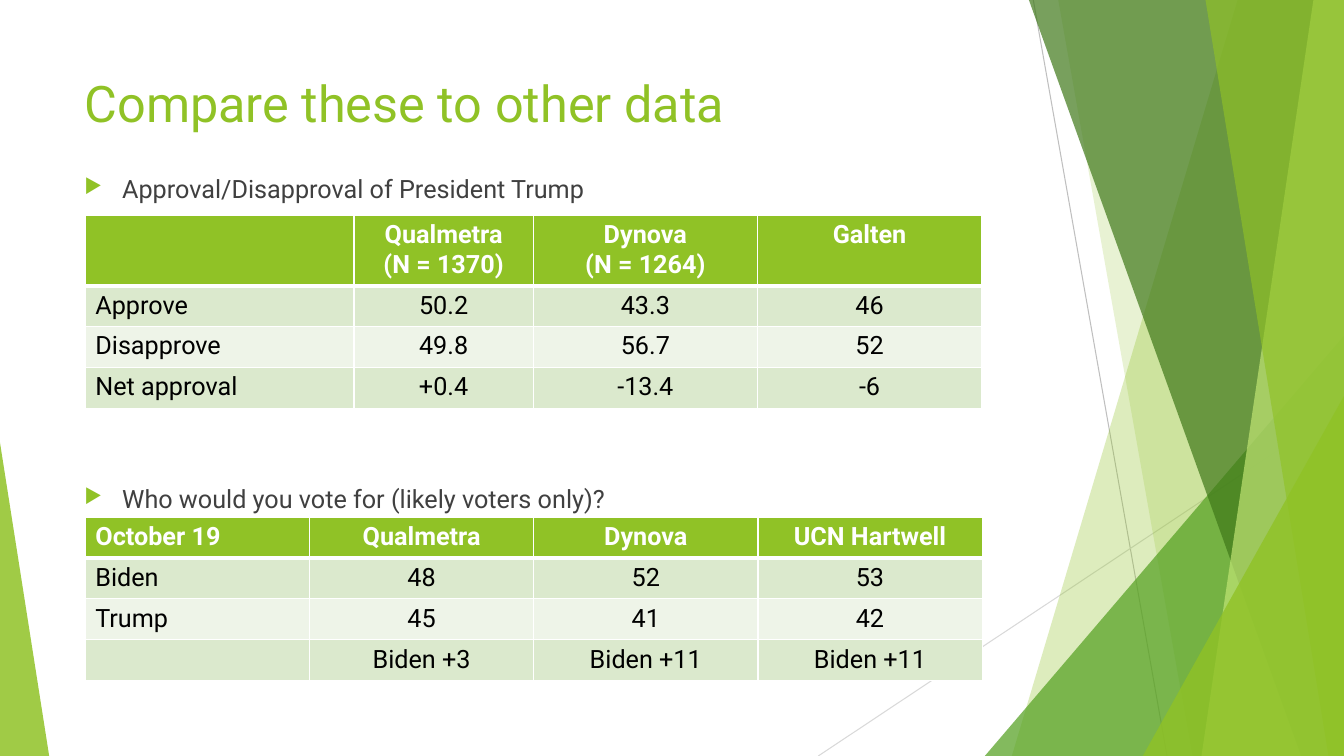
from dataclasses import dataclass
from itertools import accumulate

from lxml import etree
from pptx import Presentation
from pptx import util as u
from pptx.dml.color import RGBColor
from pptx.enum import shapes, text
from pptx.oxml.ns import qn


@dataclass(frozen=True)
class Theme:
    font: str = "Roboto"
    title_size: int = 36
    body_size: int = 18
    green: str = "90C226"
    leaf: str = "54A021"
    forest: str = "3F7819"
    lime: str = "C0E474"
    grey_line: str = "BFBFBF"
    pale_line: str = "D9D9D9"
    body: str = "404040"
    black: str = "000000"
    white: str = "FFFFFF"
    bands: tuple[str, str] = ("DBE9CD", "EEF4E8")


@dataclass(frozen=True)
class Ray:
    start: tuple[float, float]
    end: tuple[float, float]
    color: str


@dataclass(frozen=True)
class Facet:
    top_x: float
    bottom_x: float
    color: str
    opacity: int


@dataclass(frozen=True)
class Corner:
    left: float
    top: float
    width: float
    apex: int
    color: str
    opacity: int


@dataclass(frozen=True)
class Poll:
    top: float
    columns: tuple[float, ...]
    header_height: float
    rows: tuple[tuple[str, ...], ...]


THEME = Theme()
WIDTH, HEIGHT = 33.87, 19.05
MARGIN, TEXT_WIDTH = 1.88, 23.88
TABLE_LEFT, ROW_HEIGHT = 2.15, 1.03

RAYS = (
    Ray((26.04, 0), (29.41, HEIGHT), THEME.grey_line),
    Ray((WIDTH, 10.24), (20.62, HEIGHT), THEME.pale_line),
)
DECORATION = (
    Facet(31.19, 25.5, THEME.green, 30),
    Facet(26.67, 30.05, THEME.green, 20),
    Corner(24.82, 8.46, 9.05, 1, THEME.leaf, 72),
    Facet(25.93, 32.79, THEME.forest, 70),
    Facet(33.1, 30.28, THEME.lime, 70),
    Facet(30.38, 33.48, THEME.green, 65),
    Corner(28.8, 9.98, 5.07, 1, THEME.green, 80),
    Corner(0, 11.15, 1.24, 0, THEME.green, 85),
)
QUESTIONS = (
    ("Approval/Disapproval of President Trump", 10),
    ("Who would you vote for (likely voters only)?", 200),
)
POLLS = (
    Poll(5.42, (6.77, 4.52, 5.65, 5.65), 1.75, (
        ("", "Qualmetra\n(N = 1370)", "Dynova\n(N = 1264)", "Galten"),
        ("Approve", "50.2", "43.3", "46"),
        ("Disapprove", "49.8", "56.7", "52"),
        ("Net approval", "+0.4", "-13.4", "-6"),
    )),
    Poll(13.03, (5.65,) * 4, ROW_HEIGHT, (
        ("October 19", "Qualmetra", "Dynova", "UCN Hartwell"),
        ("Biden", "48", "52", "53"),
        ("Trump", "45", "41", "42"),
        ("", "Biden +3", "Biden +11", "Biden +11"),
    )),
)


def write(paragraph, content: str, *, color: str, size: int = THEME.body_size,
          bold: bool = False, align=text.PP_ALIGN.LEFT) -> None:
    paragraph.alignment = align
    run = paragraph.add_run()
    run.text = content
    run.font.name = THEME.font
    run.font.size = u.Pt(size)
    run.font.bold = bold
    run.font.color.rgb = RGBColor.from_string(color)


def draw_ray(slide, ray: Ray) -> None:
    points = [u.Cm(value) for value in ray.start + ray.end]
    connector = slide.shapes.add_connector(shapes.MSO_CONNECTOR.STRAIGHT, *points)
    connector.line.color.rgb = RGBColor.from_string(ray.color)
    connector.line.width = u.Pt(0.75)
    etree.SubElement(connector.element.spPr, qn("a:effectLst"))


def draw_decoration(slide, item: Facet | Corner) -> None:
    if isinstance(item, Facet):
        builder = slide.shapes.build_freeform(u.Cm(item.top_x), 0)
        corners = ((WIDTH, 0), (WIDTH, HEIGHT), (item.bottom_x, HEIGHT))
        builder.add_line_segments([(u.Cm(x), u.Cm(y)) for x, y in corners])
        shape = builder.convert_to_shape()
    else:
        shape = slide.shapes.add_shape(
            shapes.MSO_SHAPE.ISOSCELES_TRIANGLE, u.Cm(item.left), u.Cm(item.top),
            u.Cm(item.width), u.Cm(HEIGHT - item.top))
        shape.adjustments[0] = item.apex
    shape.shadow.inherit = False
    shape.line.fill.background()
    shape.fill.solid()
    shape.fill.fore_color.rgb = RGBColor.from_string(item.color)
    color = shape.element.spPr.find(qn("a:solidFill")).find(qn("a:srgbClr"))
    etree.SubElement(color, qn("a:alpha"), val=str(item.opacity * 1000))


def add_bullet(paragraph) -> None:
    properties = paragraph._p.get_or_add_pPr()
    properties.set("marL", str(u.Cm(0.95)))
    properties.set("indent", str(-u.Cm(0.95)))
    color = etree.SubElement(properties, qn("a:buClr"))
    etree.SubElement(color, qn("a:srgbClr"), val=THEME.green)
    etree.SubElement(properties, qn("a:buSzPct"), val="80000")
    etree.SubElement(properties, qn("a:buChar"), char="▶")


def draw_questions(slide) -> None:
    box = slide.shapes.add_textbox(u.Cm(MARGIN), u.Cm(4.24), u.Cm(TEXT_WIDTH), u.Cm(12.55))
    frame = box.text_frame
    frame.word_wrap = True
    for index, (question, gap) in enumerate(QUESTIONS):
        paragraph = frame.add_paragraph() if index else frame.paragraphs[0]
        write(paragraph, question, color=THEME.body)
        paragraph.space_before = u.Pt(gap)
        add_bullet(paragraph)


def set_borders(cell, top: int, bottom: int) -> None:
    properties = cell._tc.get_or_add_tcPr()
    widths = {"a:lnL": 1, "a:lnR": 1, "a:lnT": top, "a:lnB": bottom}
    for position, (tag, width) in enumerate(widths.items()):
        line = etree.Element(qn(tag), w=str(u.Pt(width)))
        fill = etree.SubElement(line, qn("a:solidFill"))
        etree.SubElement(fill, qn("a:srgbClr"), val=THEME.white)
        properties.insert(position, line)


def draw_poll(slide, poll: Poll) -> None:
    heights = (poll.header_height,) + (ROW_HEIGHT,) * (len(poll.rows) - 1)
    table = slide.shapes.add_table(
        len(poll.rows), len(poll.columns), u.Cm(TABLE_LEFT), u.Cm(poll.top),
        u.Cm(sum(poll.columns)), u.Cm(list(accumulate(heights))[-1])).table
    for column, width in zip(table.columns, poll.columns):
        column.width = u.Cm(width)
    for row_index, (values, height) in enumerate(zip(poll.rows, heights)):
        header = row_index == 0
        table.rows[row_index].height = u.Cm(height)
        background = THEME.green if header else THEME.bands[(row_index - 1) % 2]
        for column_index, value in enumerate(values):
            cell = table.cell(row_index, column_index)
            cell.fill.solid()
            cell.fill.fore_color.rgb = RGBColor.from_string(background)
            set_borders(cell, top=3 if row_index == 1 else 1, bottom=3 if header else 1)
            for line_index, line in enumerate(value.splitlines()):
                frame = cell.text_frame
                paragraph = frame.add_paragraph() if line_index else frame.paragraphs[0]
                write(paragraph, line, color=THEME.white if header else THEME.black, bold=header,
                      align=text.PP_ALIGN.CENTER if column_index else text.PP_ALIGN.LEFT)


def main() -> None:
    presentation = Presentation()
    presentation.slide_width, presentation.slide_height = u.Cm(WIDTH), u.Cm(HEIGHT)
    slide = presentation.slides.add_slide(presentation.slide_layouts.get_by_name("Title Only"))
    for ray in RAYS:
        draw_ray(slide, ray)
    for item in DECORATION:
        draw_decoration(slide, item)
    title = slide.shapes.title
    title.left, title.top = u.Cm(MARGIN), u.Cm(1.7)
    title.width, title.height = u.Cm(TEXT_WIDTH), u.Cm(2.06)
    title.text_frame.vertical_anchor = text.MSO_ANCHOR.TOP
    write(title.text_frame.paragraphs[0], "Compare these to other data",
          color=THEME.green, size=THEME.title_size)
    draw_questions(slide)
    for poll in POLLS:
        draw_poll(slide, poll)
    presentation.save("out.pptx")


if __name__ == "__main__":
    main()
